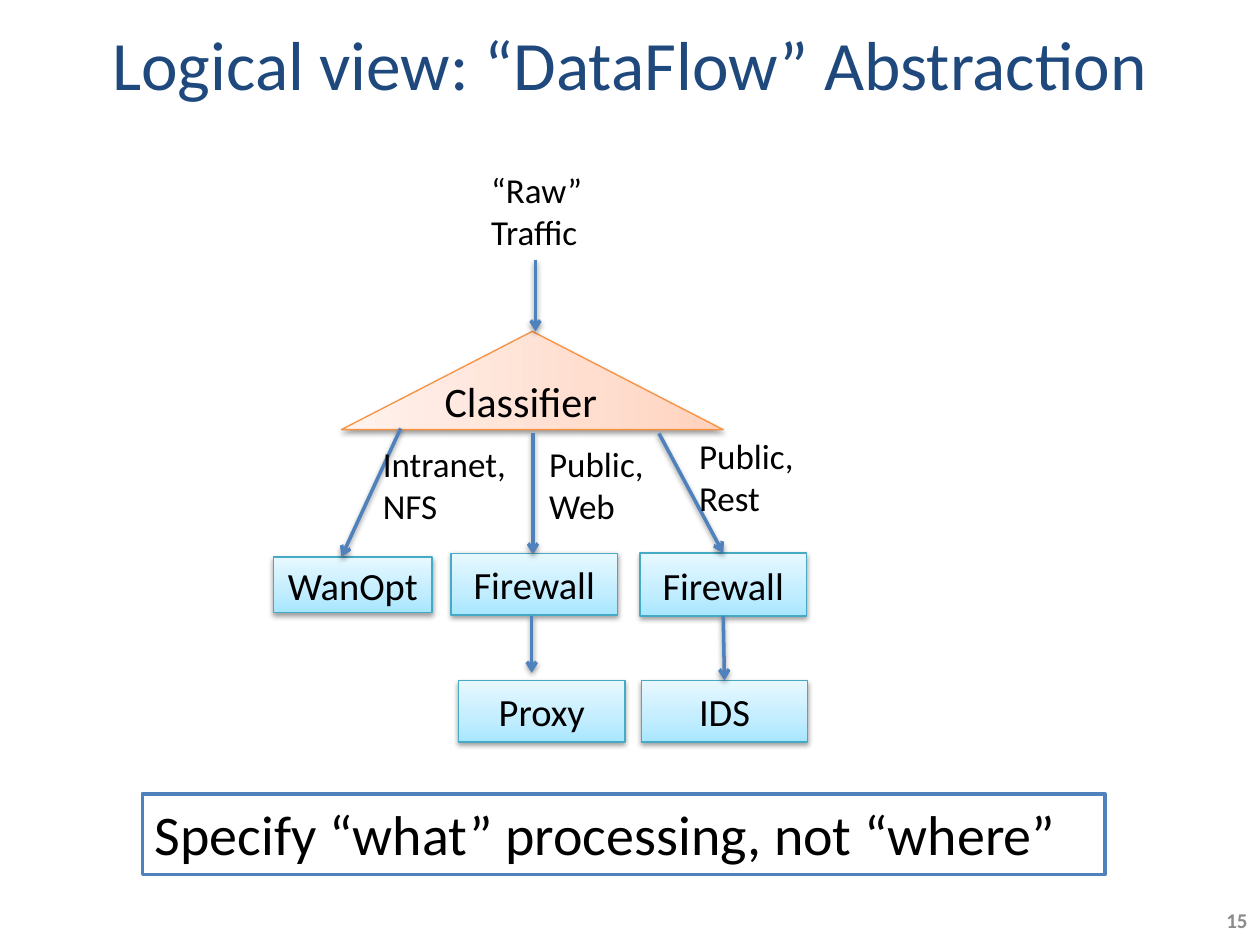
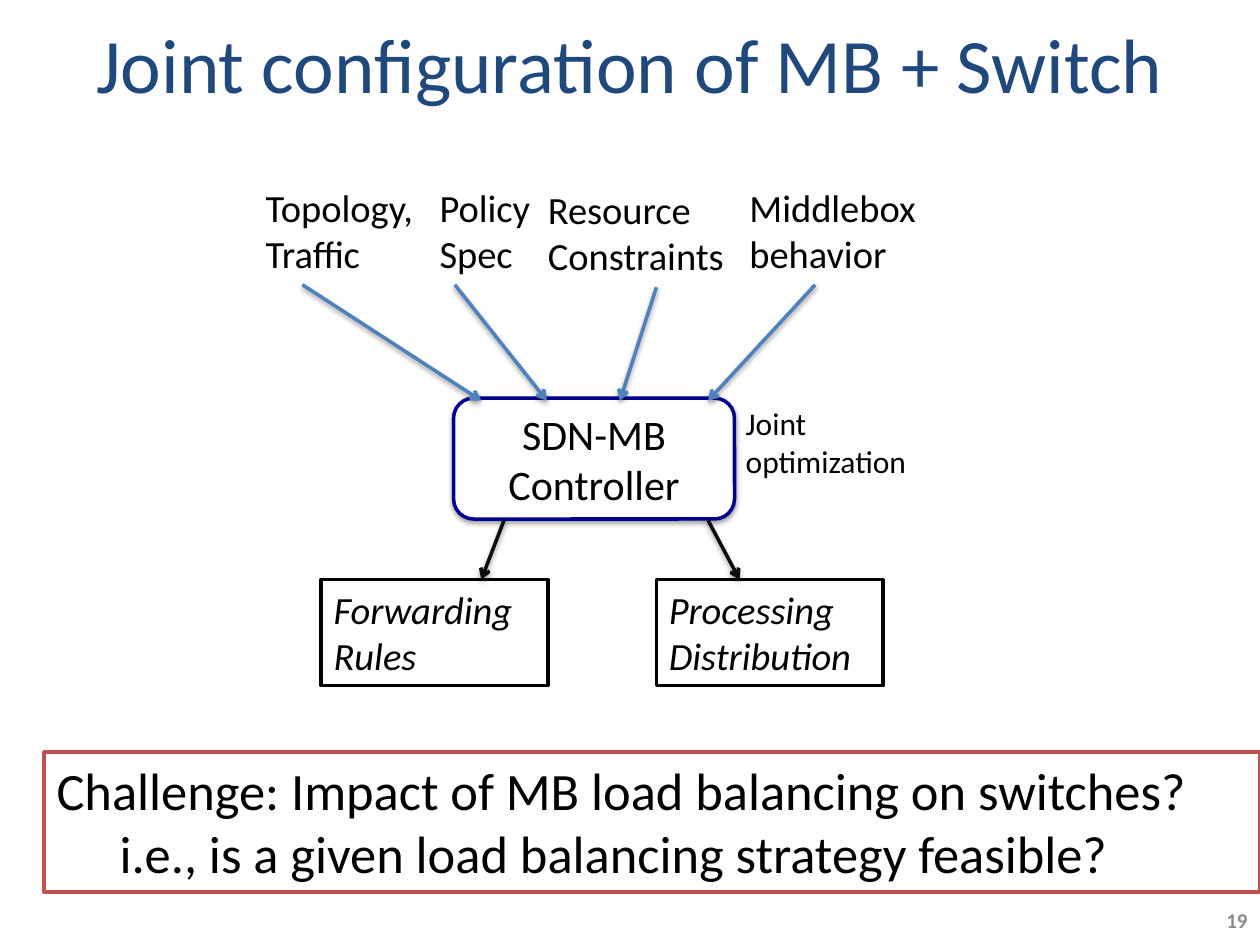
from copy import deepcopy
from lxml.etree import SubElement
from pptx import Presentation
from pptx.dml.color import RGBColor
from pptx.enum.shapes import MSO_CONNECTOR as LINE, MSO_SHAPE as SHAPE
from pptx.enum.text import MSO_ANCHOR as ANCHOR, PP_ALIGN as ALIGN
from pptx.oxml.ns import qn
from pptx.util import Inches, Pt

COLS, ROWS = 100, 75
CELL = Inches(10) / COLS
FONT = "Calibri"
BLACK, WHITE, BLUE, NAVY, RED = "000000", "FFFFFF", "4F81BD", "000090", "C0504D"
TITLE, NUMBER, CHARCOAL = "1F497D", "8C8C8C", "0D0D0D"
AQUA, AQUA_LINE = ("A7E6FF", "C1EDFF", "E7F8FF"), "46AAC5"
PEACH, PEACH_LINE = ("FFD2BD", "FFDED0", "FFF2ED"), "F69240"
STOPS = (0, 0.35, 1)


def rgb(value):
    return RGBColor.from_string(value)


def grid(*cells):
    return [round(c * CELL) for c in cells]


def write(s, text, size, color=BLACK, align=ALIGN.LEFT, anchor=ANCHOR.TOP,
          bold=False, italic=False):
    tf = s.text_frame
    tf.word_wrap = True
    tf.vertical_anchor = anchor
    tf.text = text
    for p in tf.paragraphs:
        p.alignment = align
        for r in p.runs:
            r.font.name, r.font.size = FONT, Pt(size)
            r.font.bold, r.font.italic = bold, italic
            r.font.color.rgb = rgb(color)


def add_label(slide, at, text, size, **style):
    s = slide.shapes.add_textbox(*grid(*at))
    write(s, text, size, **style)
    return s


def cast_shadow(s):
    spPr = s._element.spPr
    effects = spPr.find(qn("a:effectLst"))
    if effects is None:
        effects = SubElement(spPr, qn("a:effectLst"))
    shadow = SubElement(effects, qn("a:outerShdw"), blurRad=str(Pt(3.1)),
                        dist=str(Pt(1.6)), dir="5400000", rotWithShape="0")
    color = SubElement(shadow, qn("a:srgbClr"), val=BLACK)
    SubElement(color, qn("a:alpha"), val="38000")


def fill_gradient(s, colors, angle):
    s.fill.gradient()
    s.fill.gradient_angle = angle
    stops = s._element.spPr.find(qn("a:gradFill")).find(qn("a:gsLst"))
    stops.append(deepcopy(stops[-1]))
    for stop, place, color in zip(s.fill.gradient_stops, STOPS, colors):
        stop.position = place
        stop.color.rgb = rgb(color)


def add_block(slide, kind, at, line, width=2, shadow=False):
    s = slide.shapes.add_shape(kind, *grid(*at))
    s.shadow.inherit = False
    s.fill.solid()
    s.fill.fore_color.rgb = rgb(WHITE)
    s.line.color.rgb = rgb(line)
    s.line.width = Pt(width)
    if shadow:
        cast_shadow(s)
    return s


def add_middlebox(slide, at, text):
    s = add_block(slide, SHAPE.RECTANGLE, at, AQUA_LINE, 0.75, True)
    fill_gradient(s, AQUA, 90)
    write(s, text, 22, align=ALIGN.CENTER, anchor=ANCHOR.MIDDLE)


def add_frame(slide, at, line, text, size, italic=False):
    s = add_block(slide, SHAPE.RECTANGLE, at, line)
    write(s, text, size, italic=italic)
    return s


def add_arrow(slide, ends, color=BLUE):
    s = slide.shapes.add_connector(LINE.STRAIGHT, *grid(*ends))
    s.line.color.rgb = rgb(color)
    s.line.width = Pt(2)
    SubElement(s.line._get_or_add_ln(), qn("a:tailEnd"), type="arrow")
    cast_shadow(s)


def add_slide(prs, title, size, number):
    slide = prs.slides.add_slide(prs.slide_layouts[6])
    add_label(slide, (5, 0, 90, 10), title, size, color=TITLE,
              align=ALIGN.CENTER, anchor=ANCHOR.MIDDLE)
    add_label(slide, (93.1, 71, 6.9, 4), number, 12, color=NUMBER,
              align=ALIGN.RIGHT, anchor=ANCHOR.MIDDLE, bold=True)
    return slide


def build_dataflow(prs):
    slide = add_slide(prs, "Logical view: “DataFlow” Abstraction", 39.6, "15")
    for x, y, w, h, text in (
        (21.7, 44.2, 12.6, 4.4, "WanOpt"),
        (35.8, 43.9, 13.2, 4.9, "Firewall"),
        (50.8, 43.9, 13.2, 5, "Firewall"),
        (36.4, 54, 13.2, 4.9, "Proxy"),
        (50.9, 54, 13.2, 4.9, "IDS"),
    ):
        add_middlebox(slide, (x, y, w, h), text)

    classifier = add_block(slide, SHAPE.FLOWCHART_EXTRACT,
                           (27.1, 26.3, 30.3, 7.8), PEACH_LINE, 0.75, True)
    fill_gradient(classifier, PEACH, 180)
    add_label(slide, (34.3, 29.3, 16, 5), "Classifier", 24)

    for ends in (
        (42.5, 20.6, 42.5, 26.3),
        (31.8, 34, 27.1, 44.2),
        (42.3, 34.4, 42.3, 44),
        (52.3, 34.4, 57.4, 43.9),
        (42.2, 48.9, 42.2, 53.4),
        (57.4, 48.9, 57.5, 54),
    ):
        add_arrow(slide, ends)
    for x, y, text in (
        (38, 12.9, "“Raw”\nTraffic"),
        (29.4, 34.6, "Intranet,\nNFS"),
        (42.6, 34.6, "Public,\nWeb"),
        (54.5, 34, "Public,\nRest"),
    ):
        add_label(slide, (x, y, 14, 7.7), text, 20)
    add_frame(slide, (11.3, 63, 76.4, 6.4), BLUE,
              "Specify “what” processing, not “where”", 32)


def build_joint_configuration(prs):
    slide = add_slide(prs, "Joint configuration of MB + Switch", 44, "19")
    controller = add_block(slide, SHAPE.ROUNDED_RECTANGLE,
                           (36, 31.6, 22.3, 9.6), NAVY, shadow=True)
    write(controller, "SDN-MB\nController", 24,
          align=ALIGN.CENTER, anchor=ANCHOR.MIDDLE)

    for x, y, w, text, start, end in (
        (20.1, 14.1, 14.9, "Topology,\nTraffic", 24, 38.2),
        (33.9, 14.1, 11, "Policy\nSpec", 36.1, 43.4),
        (42.5, 14.3, 19.2, "Resource\nConstraints", 52.1, 49.2),
        (58.5, 14.1, 16, "Middlebox\nbehavior", 64.7, 56.2),
    ):
        add_label(slide, (x, y, w, 8.4), text, 22)
        add_arrow(slide, (start, y + 8.5, end, 31.8))
    for x, text, start, end in (
        (25.5, "Forwarding\nRules", 40, 38.2),
        (52.1, "Processing\nDistribution", 56.2, 58.7),
    ):
        add_frame(slide, (x, 46, 18, 8.4), BLACK, text, 22, italic=True)
        add_arrow(slide, (start, 41.3, end, 46), CHARCOAL)

    add_label(slide, (58.2, 31.6, 17, 7.1), "Joint\noptimization", 18)
    challenge = add_frame(
        slide, (3.5, 59.7, 96.5, 11.1), RED,
        "Challenge: Impact of MB load balancing on switches?\n"
        "i.e., is a given load balancing strategy feasible?", 30)
    detail = challenge.text_frame.paragraphs[1]
    detail.level = 1
    detail._p.get_or_add_pPr().set("marL", str(Inches(0.5)))


def main():
    prs = Presentation()
    prs.slide_width, prs.slide_height = grid(COLS, ROWS)
    build_dataflow(prs)
    build_joint_configuration(prs)
    prs.save("out.pptx")


if __name__ == "__main__":
    main()
